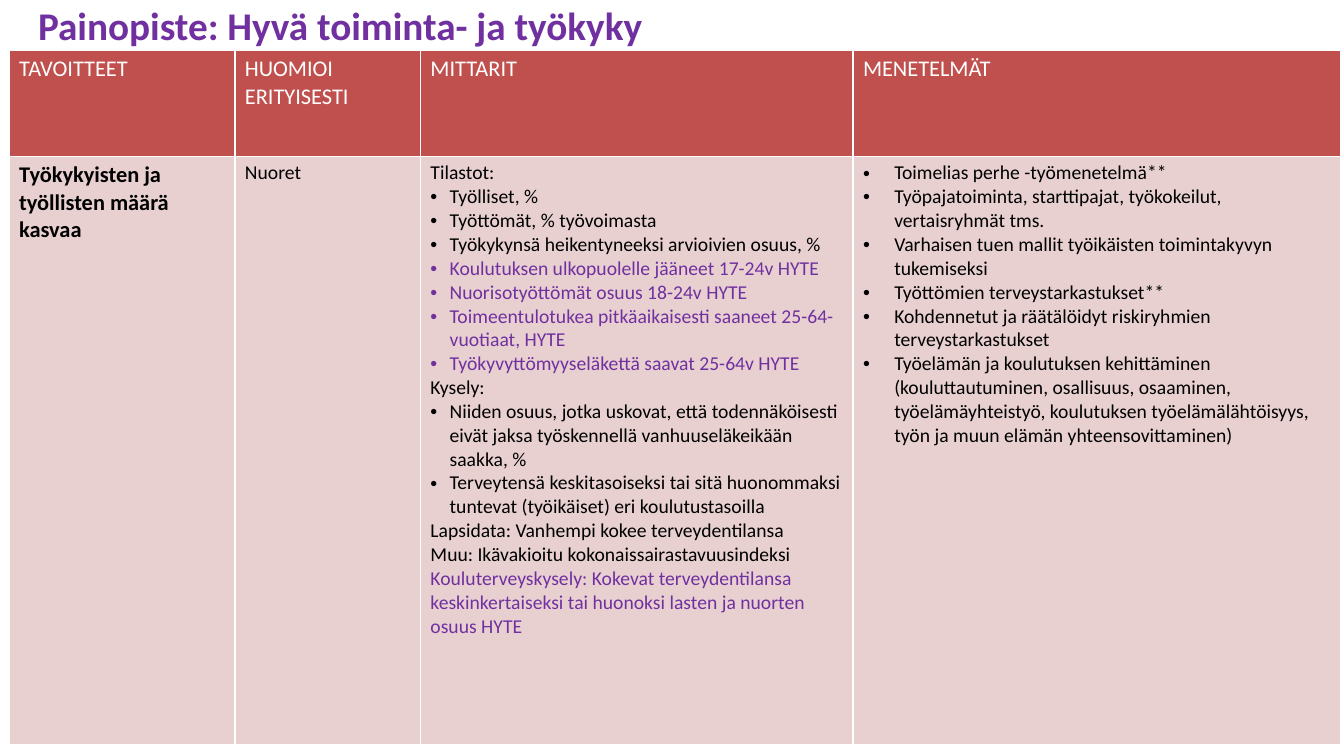
from lxml import etree
from pptx import Presentation
from pptx.dml.color import RGBColor
from pptx.enum.text import MSO_ANCHOR
from pptx.oxml.ns import qn
from pptx.util import Inches, Pt

MIDDLE = MSO_ANCHOR.MIDDLE
FONT = "Calibri"
COLORS = {"purple": "7030A0", "red": "C0504D", "pink": "E8D0D0",
          "white": "FFFFFF", "black": "000000"}

COL_WIDTHS = [2.24, 1.84, 4.29, 4.84]
ROW_HEIGHTS = [1.05, 5.84]
HEADERS = ["TAVOITTEET", "HUOMIOI ERITYISESTI", "MITTARIT", "MENETELMÄT"]

# Each paragraph: text, colour, bullet indent in inches (0 for none)
GOAL = [("Työkykyisten ja työllisten määrä kasvaa", "black", 0)]
FOCUS = [("Nuoret", "black", 0)]
MEASURES = [
    ("Tilastot:", "black", 0),
    ("Työlliset, %", "black", 0.19),
    ("Työttömät, % työvoimasta", "black", 0.19),
    ("Työkykynsä heikentyneeksi arvioivien osuus, %", "black", 0.19),
    ("Koulutuksen ulkopuolelle jääneet 17-24v HYTE", "purple", 0.19),
    ("Nuorisotyöttömät osuus 18-24v HYTE", "purple", 0.19),
    ("Toimeentulotukea pitkäaikaisesti saaneet 25-64-vuotiaat, HYTE", "purple", 0.19),
    ("Työkyvyttömyyseläkettä saavat 25-64v HYTE", "purple", 0.19),
    ("Kysely:", "black", 0),
    ("Niiden osuus, jotka uskovat, että todennäköisesti eivät jaksa työskennellä "
     "vanhuuseläkeikään saakka, %", "black", 0.19),
    ("Terveytensä keskitasoiseksi tai sitä huonommaksi tuntevat (työikäiset) eri "
     "koulutustasoilla", "black", 0.19),
    ("Lapsidata: Vanhempi kokee terveydentilansa", "black", 0),
    ("Muu: Ikävakioitu kokonaissairastavuusindeksi", "black", 0),
    ("Kouluterveyskysely: Kokevat terveydentilansa keskinkertaiseksi tai huonoksi "
     "lasten ja nuorten osuus HYTE", "purple", 0),
]
METHODS = [(text, "black", 0.31) for text in [
    "Toimelias perhe -työmenetelmä**",
    "Työpajatoiminta, starttipajat, työkokeilut, vertaisryhmät tms.",
    "Varhaisen tuen mallit työikäisten toimintakyvyn tukemiseksi",
    "Työttömien terveystarkastukset**",
    "Kohdennetut ja räätälöidyt riskiryhmien terveystarkastukset",
    "Työelämän ja koulutuksen kehittäminen (kouluttautuminen, osallisuus, osaaminen, "
    "työelämäyhteistyö, koulutuksen työelämälähtöisyys, työn ja muun elämän "
    "yhteensovittaminen)",
]]
ROWS = [[[(header, "white", 0)] for header in HEADERS],
        [GOAL, FOCUS, MEASURES, METHODS]]


def write_paragraphs(tf, paragraphs, size, bold=False):
    for i, (text, color, indent) in enumerate(paragraphs):
        p = tf.paragraphs[0] if i == 0 else tf.add_paragraph()
        p.text = text
        font = p.runs[0].font
        font.name, font.size, font.bold = FONT, Pt(size), bold
        font.color.rgb = RGBColor.from_string(COLORS[color])
        if indent:
            pPr = p._p.get_or_add_pPr()
            pPr.set("marL", str(Inches(indent)))
            pPr.set("indent", str(-Inches(indent)))
            etree.SubElement(pPr, qn("a:buFont"), typeface="Arial")
            etree.SubElement(pPr, qn("a:buChar"), char="•")


def add_borders(cell):
    tcPr = cell._tc.get_or_add_tcPr()
    for side in ("lnL", "lnR", "lnT", "lnB"):
        ln = etree.SubElement(tcPr, qn("a:" + side), w=str(Pt(1)))
        fill = etree.SubElement(ln, qn("a:solidFill"))
        etree.SubElement(fill, qn("a:srgbClr"), val=COLORS["white"])


prs = Presentation()
prs.slide_width, prs.slide_height = Inches(13.33), Inches(7.5)
s = prs.slides.add_slide(prs.slide_layouts[6])

title = s.shapes.add_textbox(Inches(0.28), Inches(0), Inches(12), Inches(0.5))
tf = title.text_frame
tf.word_wrap = True
tf.vertical_anchor = MIDDLE
write_paragraphs(tf, [("Painopiste: Hyvä toiminta- ja työkyky", "purple", 0)], 28, bold=True)

table = s.shapes.add_table(len(ROWS), len(HEADERS), Inches(0.09), Inches(0.5),
                           Inches(sum(COL_WIDTHS)), Inches(sum(ROW_HEIGHTS))).table
for column, width in zip(table.columns, COL_WIDTHS):
    column.width = Inches(width)
for row, height in zip(table.rows, ROW_HEIGHTS):
    row.height = Inches(height)

for r, row in enumerate(ROWS):
    for c, paragraphs in enumerate(row):
        cell = table.cell(r, c)
        add_borders(cell)
        cell.fill.solid()
        cell.fill.fore_color.rgb = RGBColor.from_string(COLORS["pink" if r else "red"])
        is_goal = paragraphs is GOAL
        write_paragraphs(cell.text_frame, paragraphs,
                         16 if r == 0 or is_goal else 14, bold=is_goal)

prs.save("out.pptx")
